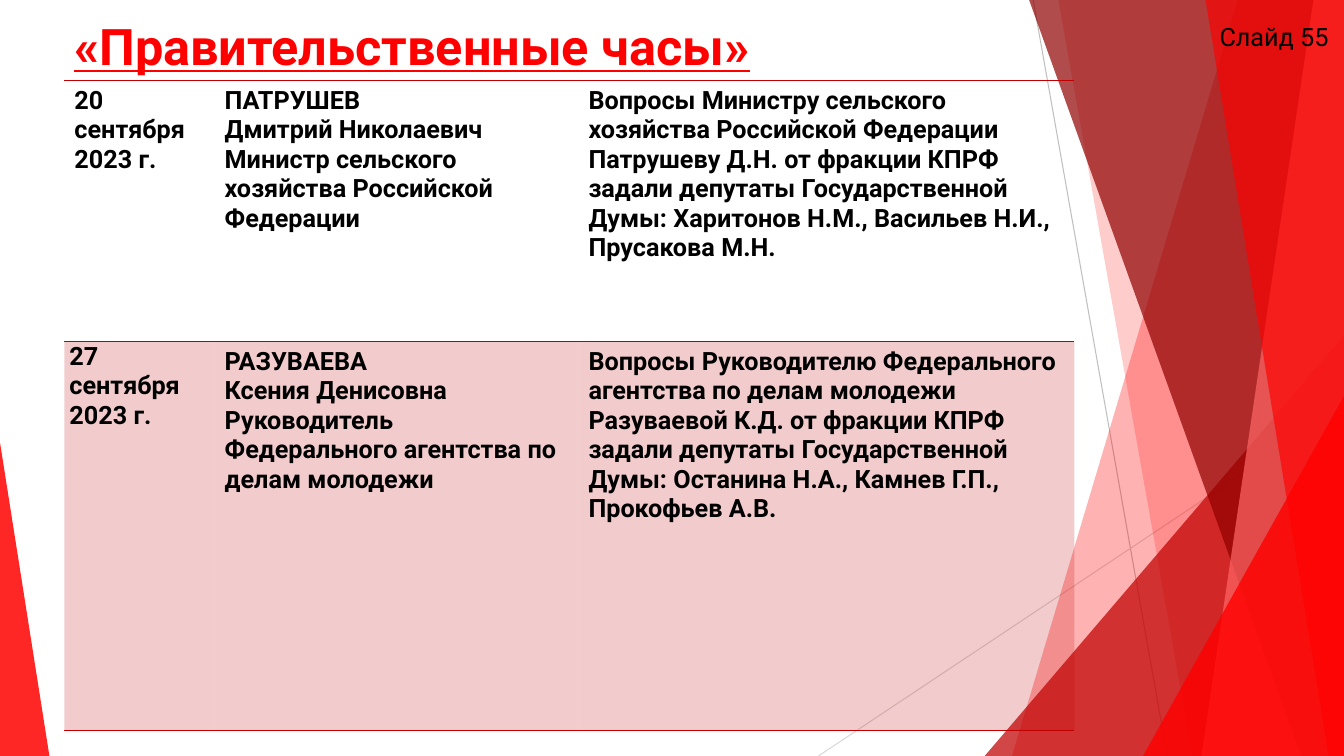
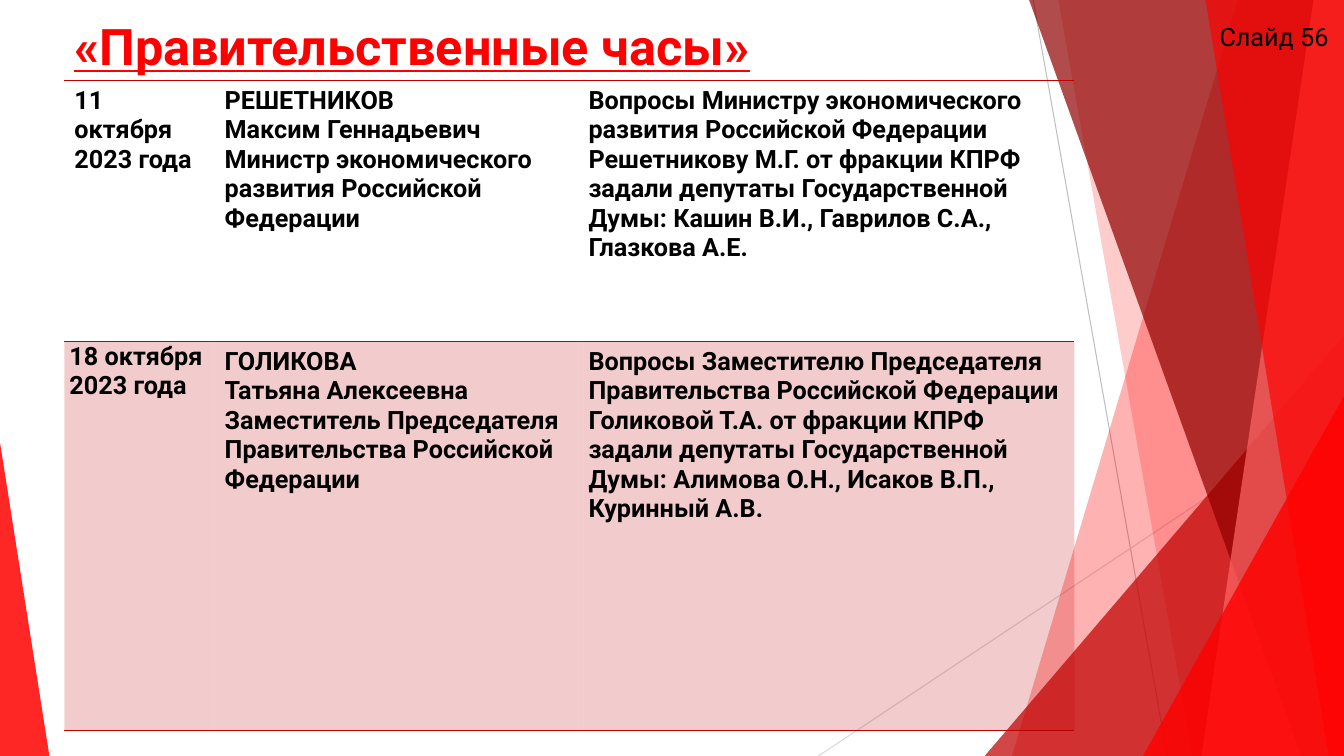
from dataclasses import dataclass

from lxml import etree
from pptx import Presentation
from pptx.dml.color import RGBColor
from pptx.enum.shapes import MSO_CONNECTOR, MSO_SHAPE
from pptx.enum.text import MSO_AUTO_SIZE
from pptx.oxml.ns import qn
from pptx.util import Pt

TRIANGLE = MSO_SHAPE.ISOSCELES_TRIANGLE
STRAIGHT = MSO_CONNECTOR.STRAIGHT
FIT_SHAPE = MSO_AUTO_SIZE.SHAPE_TO_FIT_TEXT
PLAIN_TABLE_STYLE = "{2D5ABB26-0587-4C30-8999-92F81FD0307C}"
WIDTH, HEIGHT = 960, 540


@dataclass(frozen=True)
class Theme:
    font: str = "Roboto"
    title_size: int = 36
    body_size: int = 18
    red: str = "FF0000"
    crimson: str = "C00000"
    maroon: str = "900000"
    rose: str = "FF6666"
    text: str = "000000"
    light_line: str = "D9D9D9"
    mid_line: str = "BFBFBF"


THEME = Theme()


def fill_translucent(fill, element, color, opacity):
    """Fill with a colour at the given opacity in percent; element holds the fill."""
    fill.solid()
    fill.fore_color.rgb = RGBColor.from_string(color)
    color_element = next(element.iter(qn("a:srgbClr")))
    etree.SubElement(color_element, qn("a:alpha"), val=str(opacity * 1000))


def write_text(text_frame, text, size=THEME.body_size, color=THEME.text, bold=False, underline=False):
    text_frame.text = text
    for paragraph in text_frame.paragraphs:
        for run in paragraph.runs:
            font = run.font
            font.name, font.size = THEME.font, Pt(size)
            font.bold, font.underline = bold, underline
            font.color.rgb = RGBColor.from_string(color)


# Start, end and colour of the thin lines
THIN_LINES = [
    (738, 0, 833.8, HEIGHT, THEME.mid_line),
    (WIDTH, 290.2, 584.6, HEIGHT, THEME.light_line),
]
# Bands reach the right edge: (top x, bottom x).
# Triangles: (left, top, width, apex position).
FACETS = [
    ((884.2, 722.9), THEME.red, 30),
    ((756, 851.8), THEME.red, 20),
    ((703.4, 239.8, 256.6, 1), THEME.crimson, 72),
    ((735.1, 929.5), THEME.maroon, 70),
    ((938.2, 858.2), THEME.rose, 70),
    ((861.1, 949), THEME.red, 65),
    ((816.5, 283, 143.5, 1), THEME.red, 80),
    ((0, 316.1, 35.3, 0), THEME.red, 85),
]

TITLE = "«Правительственные часы»"
COLUMN_WIDTHS = [107.3, 259.9, 354.2]
ROW_HEIGHTS = [186.5, 277.9]
FIRST_NUMBER = 55
HEARINGS = [
    [
        (
            "20 сентября 2023 г.",
            "ПАТРУШЕВ\nДмитрий Николаевич Министр сельского хозяйства Российской Федерации",
            "Вопросы Министру сельского хозяйства Российской Федерации Патрушеву Д.Н. "
            "от фракции КПРФ задали депутаты Государственной Думы: "
            "Харитонов Н.М., Васильев Н.И., Прусакова М.Н.",
        ),
        (
            "27 сентября 2023 г.",
            "РАЗУВАЕВА\nКсения Денисовна\nРуководитель Федерального агентства по делам молодежи",
            "Вопросы Руководителю Федерального агентства по делам молодежи Разуваевой К.Д. "
            "от фракции КПРФ задали депутаты Государственной Думы: "
            "Останина Н.А., Камнев Г.П., Прокофьев А.В.",
        ),
    ],
    [
        (
            "11 октября 2023 года",
            "РЕШЕТНИКОВ\nМаксим Геннадьевич Министр экономического развития Российской Федерации",
            "Вопросы Министру экономического развития Российской Федерации Решетникову М.Г. "
            "от фракции КПРФ задали депутаты Государственной Думы: "
            "Кашин В.И., Гаврилов С.А., Глазкова А.Е.",
        ),
        (
            "18 октября 2023 года",
            "ГОЛИКОВА\nТатьяна Алексеевна\nЗаместитель Председателя Правительства Российской Федерации",
            "Вопросы Заместителю Председателя Правительства Российской Федерации Голиковой Т.А. "
            "от фракции КПРФ задали депутаты Государственной Думы: "
            "Алимова О.Н., Исаков В.П., Куринный А.В.",
        ),
    ],
]

presentation = Presentation()
presentation.slide_width, presentation.slide_height = Pt(WIDTH), Pt(HEIGHT)
layout = presentation.slide_layouts[6]
for placeholder in list(layout.placeholders):
    layout.shapes.element.remove(placeholder.element)
slides = [presentation.slides.add_slide(layout) for _ in HEARINGS]

# The backdrop is drawn on the first slide, then moved to the shared layout
backdrop = slides[0].shapes
for start_x, start_y, end_x, end_y, color in THIN_LINES:
    line = backdrop.add_connector(STRAIGHT, Pt(start_x), Pt(start_y), Pt(end_x), Pt(end_y))
    line.line.color.rgb = RGBColor.from_string(color)
    line.line.width = Pt(0.75)
    etree.SubElement(line.element.spPr, qn("a:effectLst"))

for geometry, color, opacity in FACETS:
    if len(geometry) == 2:
        top_x, bottom_x = geometry
        outline = backdrop.build_freeform(Pt(top_x), 0)
        corners = [(WIDTH, 0), (WIDTH, HEIGHT), (bottom_x, HEIGHT)]
        outline.add_line_segments([(Pt(x), Pt(y)) for x, y in corners], close=True)
        facet = outline.convert_to_shape()
    else:
        left, top, width, apex = geometry
        facet = backdrop.add_shape(TRIANGLE, Pt(left), Pt(top), Pt(width), Pt(HEIGHT - top))
        facet.adjustments[0] = apex
    fill_translucent(facet.fill, facet.element, color, opacity)
    facet.line.fill.background()
    facet.shadow.inherit = False

for shape in list(backdrop):
    layout.shapes.element.append(shape.element)

for number, (slide, hearings) in enumerate(zip(slides, HEARINGS), FIRST_NUMBER):
    title = slide.shapes.add_textbox(Pt(46), Pt(7.5), Pt(677), Pt(50))
    title.text_frame.word_wrap = True
    write_text(title.text_frame, TITLE, THEME.title_size, THEME.red, bold=True, underline=True)

    table_frame = slide.shapes.add_table(
        len(ROW_HEIGHTS), len(COLUMN_WIDTHS),
        Pt(46), Pt(57.6), Pt(sum(COLUMN_WIDTHS)), Pt(sum(ROW_HEIGHTS)),
    )
    table = table_frame.table
    table.first_row = table.horz_banding = False
    next(table_frame.element.iter(qn("a:tableStyleId"))).text = PLAIN_TABLE_STYLE
    for column, width in zip(table.columns, COLUMN_WIDTHS):
        column.width = Pt(width)
    for row_index, (row, height, texts) in enumerate(zip(table.rows, ROW_HEIGHTS, hearings)):
        row.height = Pt(height)
        for cell, text in zip(row.cells, texts):
            write_text(cell.text_frame, text, bold=True)
            if row_index == 0:
                cell.fill.background()
                sides = ["a:lnB", "a:lnT"]
            else:
                fill_translucent(cell.fill, cell._tc.tcPr, THEME.crimson, 20)
                sides = ["a:lnB"]
            for side in sides:
                border = etree.Element(qn(side), w=str(Pt(1)))
                border_fill = etree.SubElement(border, qn("a:solidFill"))
                etree.SubElement(border_fill, qn("a:srgbClr"), val=THEME.crimson)
                cell._tc.tcPr.insert(0, border)
    second_date = table.cell(1, 0)
    second_date.margin_left = second_date.margin_right = Pt(3.6)
    second_date.margin_top = second_date.margin_bottom = 0

    label = slide.shapes.add_textbox(Pt(864), Pt(11.5), Pt(96), Pt(29))
    write_text(label.text_frame, f"Слайд {number}")
    label.text_frame.word_wrap = False
    label.text_frame.auto_size = FIT_SHAPE

presentation.save("out.pptx")
